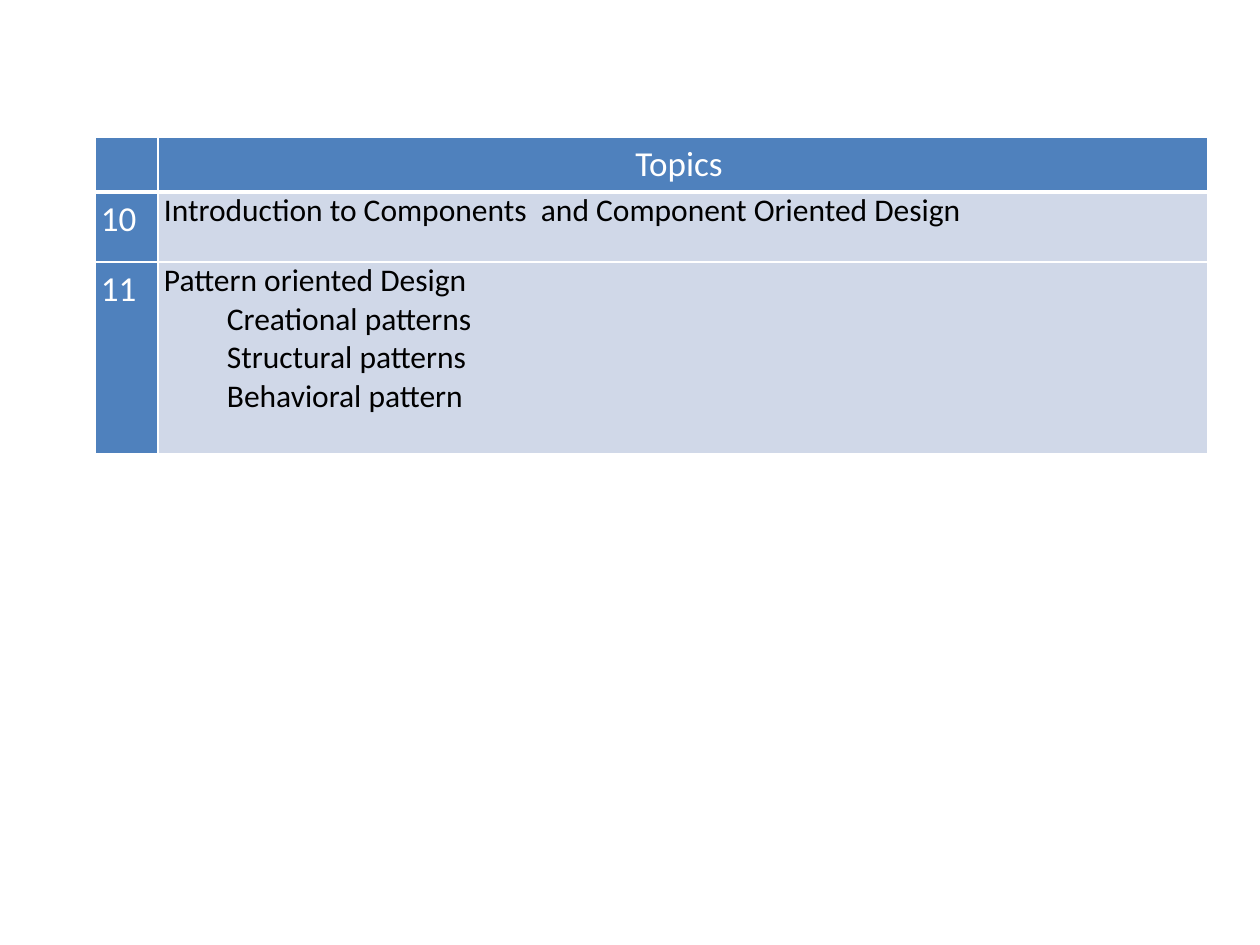
from pptx import Presentation
from pptx.dml.color import RGBColor
from pptx.enum.text import PP_ALIGN
from pptx.oxml.xmlchemy import OxmlElement
from pptx.util import Emu, Pt

PX = 914400 / 126
BLUE = RGBColor(0x4F, 0x81, 0xBD)
PALE = RGBColor(0xD0, 0xD8, 0xE8)
WHITE = RGBColor(0xFF, 0xFF, 0xFF)
BLACK = RGBColor(0, 0, 0)

ROWS = [
    ("", ["Topics "]),
    ("10", ["Introduction to Components  and Component Oriented Design"]),
    ("11", ["Pattern oriented Design", "Creational patterns",
            "Structural patterns", "Behavioral pattern"]),
]
COL_WIDTHS = [63, 1050]
ROW_HEIGHTS = [55, 70, 192]


def px(n):
    return Emu(round(n * PX))


class Deck:
    font = "Calibri"
    label = {"fill": BLUE, "color": WHITE, "size": 20, "line_spacing": 1.15}
    body = {"fill": PALE, "color": BLACK, "size": 18, "line_spacing": 1.0}

    def __init__(self, width, height):
        self.prs = Presentation()
        self.prs.slide_width, self.prs.slide_height = px(width), px(height)
        self.s = self.prs.slides.add_slide(self.prs.slide_layouts[6])

    def table(self, x, y, widths, heights):
        frame = self.s.shapes.add_table(len(heights), len(widths), px(x), px(y),
                                        px(sum(widths)), px(sum(heights)))
        tbl = frame.table
        for col, w in zip(tbl.columns, widths):
            col.width = px(w)
        for row, h in zip(tbl.rows, heights):
            row.height = px(h)
        return tbl

    def borders(self, cell, bottom):
        """Draw white cell borders; they must precede the fill in the XML."""
        pr = cell._tc.get_or_add_tcPr()
        for tag, width in (("lnL", 1), ("lnR", 1), ("lnT", 1), ("lnB", bottom)):
            ln = OxmlElement(f"a:{tag}")
            ln.set("w", str(Pt(width)))
            fill, clr = OxmlElement("a:solidFill"), OxmlElement("a:srgbClr")
            clr.set("val", str(WHITE))
            fill.append(clr)
            ln.append(fill)
            pr.append(ln)

    def cell(self, cell, lines, style, align=PP_ALIGN.LEFT, bottom=1):
        """Fill a cell; lines after the first are indented one level."""
        margins = {"margin_left": px(6), "margin_right": px(6),
                   "margin_top": 0, "margin_bottom": 0}
        for name, value in margins.items():
            setattr(cell, name, value)
        self.borders(cell, bottom)
        cell.fill.solid()
        cell.fill.fore_color.rgb = style["fill"]
        tf = cell.text_frame
        for i, line in enumerate(lines):
            p = tf.add_paragraph() if i else tf.paragraphs[0]
            p.alignment, p.line_spacing = align, style["line_spacing"]
            if i:
                p.level = 1
                pr = p._p.get_or_add_pPr()
                pr.set("marL", str(px(63)))
                pr.set("indent", "0")
            r = p.add_run()
            r.text = line
            font = {"name": self.font, "size": Pt(style["size"]), "bold": False}
            for name, value in font.items():
                setattr(r.font, name, value)
            r.font.color.rgb = style["color"]


def main():
    deck = Deck(1260, 945)
    tbl = deck.table(95, 137, COL_WIDTHS, ROW_HEIGHTS)
    for i, (number, topics) in enumerate(ROWS):
        bottom = 1 if i else 3
        deck.cell(tbl.cell(i, 0), [number] if number else [], deck.label, bottom=bottom)
        deck.cell(tbl.cell(i, 1), topics, deck.body if i else deck.label,
                  PP_ALIGN.LEFT if i else PP_ALIGN.CENTER, bottom)
    deck.prs.save("out.pptx")


if __name__ == "__main__":
    main()
